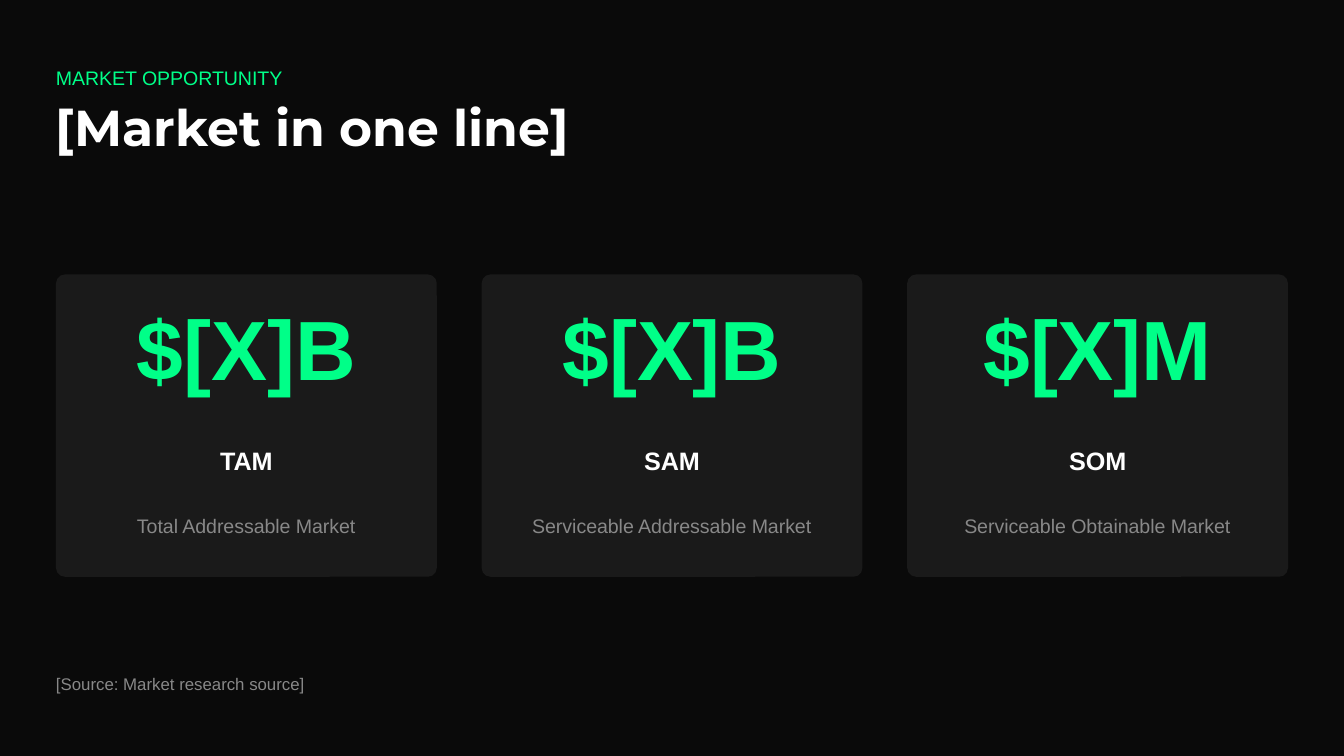
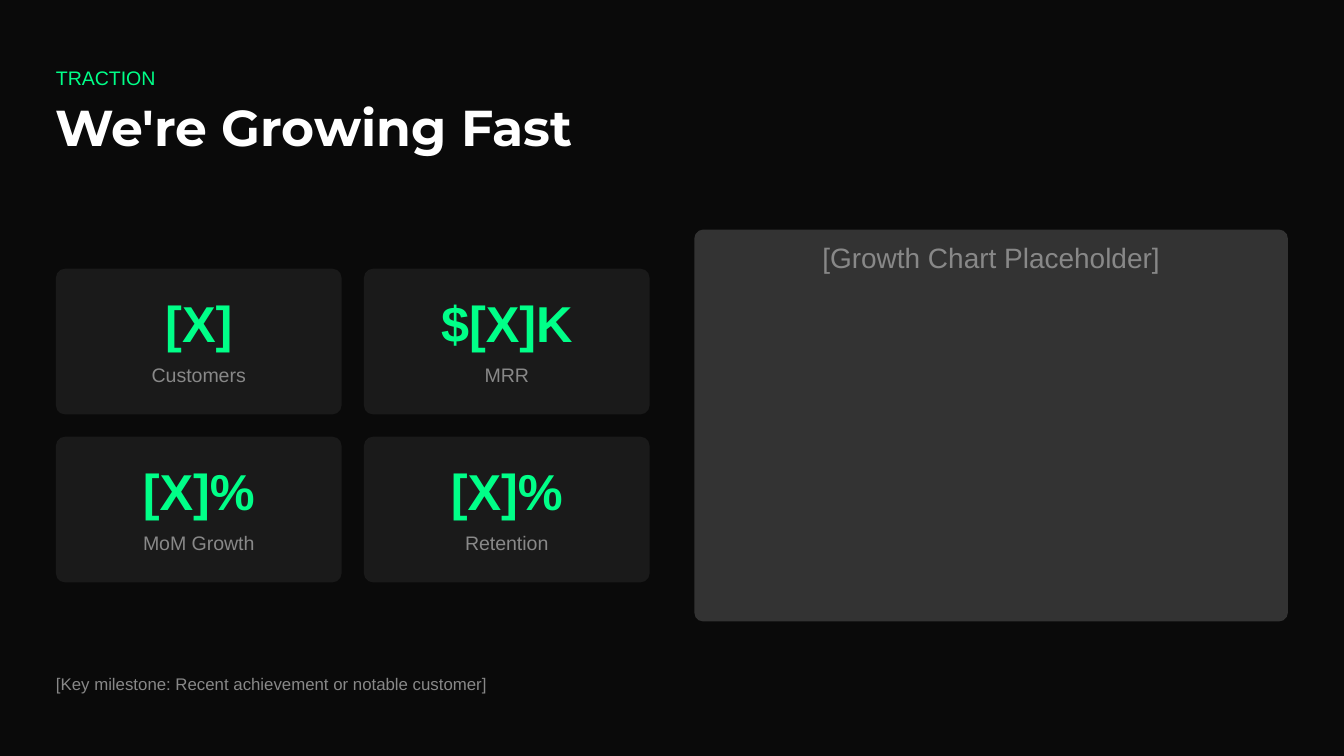
from pptx import Presentation
from pptx import util as u
from pptx.dml.color import RGBColor
from pptx.enum import shapes, text

COLORS = {
    "background": "0A0A0A", "card": "1A1A1A", "panel": "333333",
    "accent": "00FF88", "white": "FFFFFF", "muted": "888888",
}
# Square grid: 24 columns by 13.5 rows; all positions are in grid cells.
CELL = u.Inches(10) / 24
MARGIN = 1
RADIUS = 0.16

# Text styles: font, size, line spacing, bold, colour, space before, space after
STYLES = {
    "eyebrow": ("Arial", 10.5, 15, False, "accent", 3, 6),
    "title": ("Montserrat", 27, 30, True, "white", 0, 24),
    "figure": ("Arial", 45, 45, True, "accent", 3, 6),
    "name": ("Arial", 13.5, 21, True, "white", 3, 3),
    "label": ("Arial", 10.5, 15, False, "muted", 3, 3),
    "metric": ("Arial", 27, 30, True, "accent", 3, 3),
    "placeholder": ("Arial", 15, 21, False, "muted", 3, 3),
    "footer": ("Arial", 9, 12, False, "muted", 12, 3),
}


def add_text(page, words, style, left, top, width, height, centred=False):
    font, size, leading, bold, color, before, after = STYLES[style]
    box = page.shapes.add_textbox(*(round(n * CELL) for n in (left, top, width, height)))
    frame = box.text_frame
    frame.margin_left = frame.margin_right = frame.margin_top = frame.margin_bottom = 0
    frame.word_wrap = not centred
    para = frame.paragraphs[0]
    para.alignment = text.PP_ALIGN.CENTER if centred else text.PP_ALIGN.LEFT
    para.line_spacing = u.Pt(leading)
    para.space_before, para.space_after = u.Pt(before), u.Pt(after)
    span = para.add_run()
    span.text = words
    span.font.name, span.font.size, span.font.bold = font, u.Pt(size), bold
    span.font.color.rgb = RGBColor.from_string(COLORS[color])


def add_card(page, left, top, width, height, color="card"):
    card = page.shapes.add_shape(
        shapes.MSO_SHAPE.ROUNDED_RECTANGLE,
        *(round(n * CELL) for n in (left, top, width, height)))
    card.adjustments[0] = RADIUS / min(width, height)
    card.shadow.inherit = False
    card.fill.solid()
    card.fill.fore_color.rgb = RGBColor.from_string(COLORS[color])
    card.line.fill.background()


deck = Presentation()
deck.slide_width, deck.slide_height = round(24 * CELL), round(13.5 * CELL)

# What both slides share: background, eyebrow, title and footer
pages = []
for eyebrow, title, footer in [
    ("MARKET OPPORTUNITY", "[Market in one line]", "[Source: Market research source]"),
    ("TRACTION", "We're Growing Fast",
     "[Key milestone: Recent achievement or notable customer]"),
]:
    page = deck.slides.add_slide(deck.slide_layouts[6])
    page.background.fill.solid()
    page.background.fill.fore_color.rgb = RGBColor.from_string(COLORS["background"])
    add_text(page, eyebrow, "eyebrow", MARGIN, 1.1, 22.44, 0.5)
    add_text(page, title, "title", MARGIN, 1.8, 11.25, 1)
    add_text(page, footer, "footer", MARGIN, 12, 22.44, 0.4)
    pages.append(page)
market, traction = pages

# Market: three cards in a row, each line centred on its card
CARD_WIDTH, CARD_GAP = 6.8, 0.8
for column, lines in enumerate([
    [("$[X]B", 4), ("TAM", 0.96), ("Total Addressable Market", 4)],
    [("$[X]B", 4), ("SAM", 1), ("Serviceable Addressable Market", 5.1)],
    [("$[X]M", 4.2), ("SOM", 1.05), ("Serviceable Obtainable Market", 4.87)],
]):
    left = MARGIN + column * (CARD_WIDTH + CARD_GAP)
    add_card(market, left, 4.9, CARD_WIDTH, 5.4)
    rows = [("figure", 5.6, 1.5), ("name", 7.8, 0.7), ("label", 9.1, 0.5)]
    for (words, width), (style, top, height) in zip(lines, rows):
        add_text(market, words, style, left + (CARD_WIDTH - width) / 2,
                 top, width, height, centred=True)

# Traction: two by two metric tiles
TILE_WIDTH, TILE_HEIGHT, TILE_GAP, TILE_INSET = 5.1, 2.6, 0.4, 0.35
for index, (value, label) in enumerate([
    ("[X]", "Customers"), ("$[X]K", "MRR"),
    ("[X]%", "MoM Growth"), ("[X]%", "Retention"),
]):
    row, column = divmod(index, 2)
    left = MARGIN + column * (TILE_WIDTH + TILE_GAP)
    top = 4.8 + row * (TILE_HEIGHT + TILE_GAP)
    add_card(traction, left, top, TILE_WIDTH, TILE_HEIGHT)
    for words, style, offset, height in [(value, "metric", 0.5, 1), (label, "label", 1.6, 0.5)]:
        add_text(traction, words, style, left + TILE_INSET, top + offset,
                 TILE_WIDTH - 2 * TILE_INSET, height, centred=True)

# Traction: panel reserved for the growth chart
add_card(traction, 12.4, 4.1, 10.6, 7, "panel")
add_text(traction, "[Growth Chart Placeholder]", "placeholder", 12.3, 4.2, 10.8, 0.7, centred=True)

deck.save("out.pptx")
